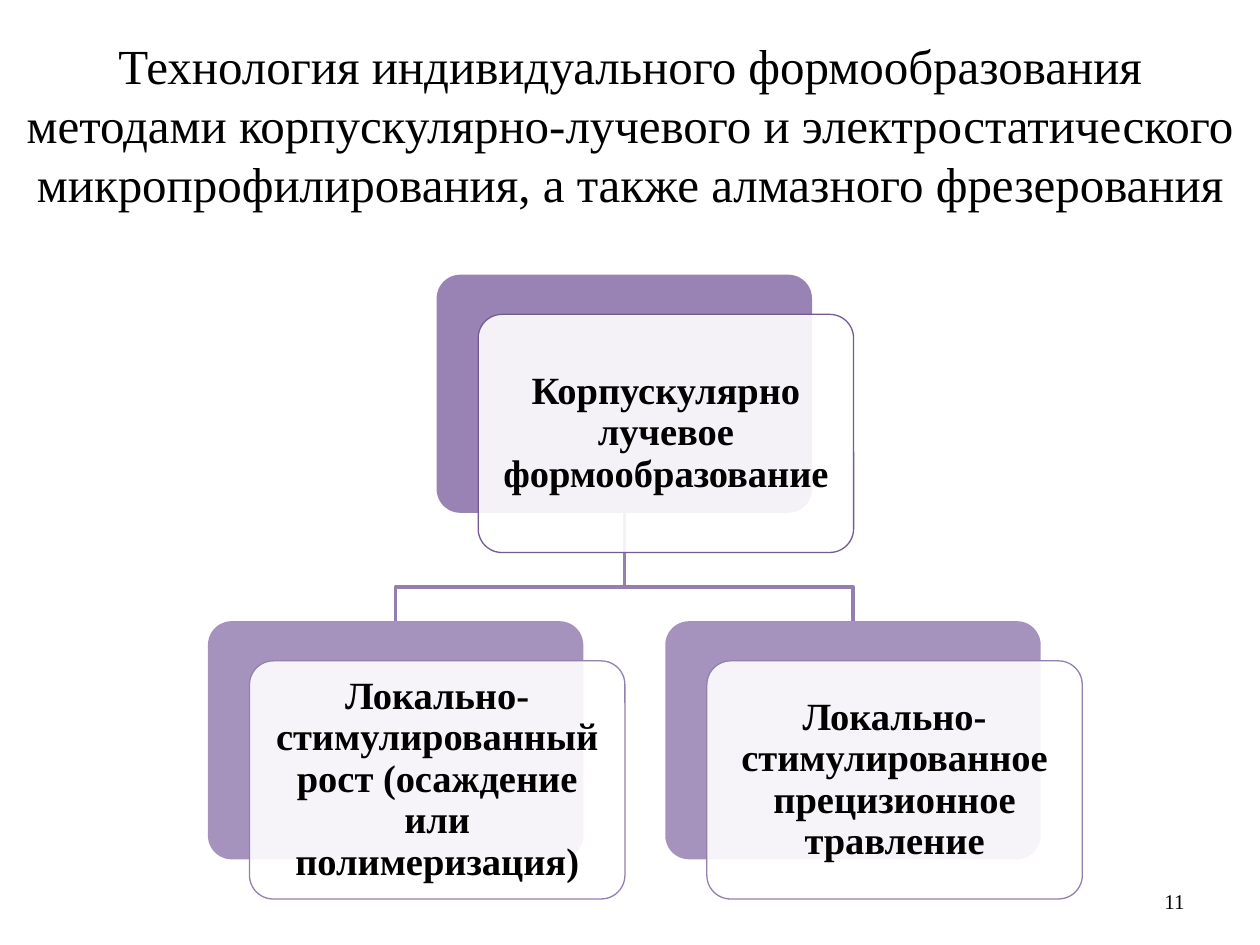
from dataclasses import dataclass

from lxml.etree import SubElement
from pptx import Presentation
from pptx.dml.color import RGBColor
from pptx.enum.shapes import MSO_SHAPE
from pptx.enum.text import MSO_ANCHOR, PP_ALIGN
from pptx.oxml.ns import qn
from pptx.util import Inches, Pt

COLORS = {
    "text": "000000",
    "purple": "8064A2",
    "white": "FFFFFF",
    "root_line": "745B93",
    "branch_line": "9480AE",
}
FONT = "Times New Roman"
CARD_WIDTH, CARD_HEIGHT = 2.98, 1.89
OFFSET_X, OFFSET_Y = 0.33, 0.315  # front card relative to back card
TEXT_INSET = 0.055


@dataclass
class Card:
    text: str
    left: float
    top: float
    opacity: int
    line: str

    @property
    def center(self) -> float:
        return self.left + CARD_WIDTH / 2


ROOT = Card("Корпускулярно лучевое формообразование", 3.465, 2.18, 80, "root_line")
BRANCHES = [
    Card("Локально-стимулированный рост (осаждение или полимеризация)",
         1.65, 4.93, 70, "branch_line"),
    Card("Локально-стимулированное прецизионное травление",
         5.28, 4.93, 70, "branch_line"),
]


def color(name: str) -> RGBColor:
    return RGBColor.from_string(COLORS[name])


def write_text(shape, text: str, size: int, align, bold: bool = False, **spacing) -> None:
    frame = shape.text_frame
    frame.word_wrap = True
    frame.vertical_anchor = MSO_ANCHOR.MIDDLE
    paragraph = frame.paragraphs[0]
    for name, value in {"alignment": align, **spacing}.items():
        setattr(paragraph, name, value)
    run = paragraph.add_run()
    run.text = text
    for name, value in {"name": FONT, "size": Pt(size), "bold": bold}.items():
        setattr(run.font, name, value)
    run.font.color.rgb = color("text")


def add_panel(slide, left: float, top: float, fill: str, opacity: int):
    shape = slide.shapes.add_shape(
        MSO_SHAPE.ROUNDED_RECTANGLE,
        Inches(left), Inches(top), Inches(CARD_WIDTH), Inches(CARD_HEIGHT))
    shape.adjustments[0] = 0.1
    shape.shadow.inherit = False
    shape.fill.solid()
    shape.fill.fore_color.rgb = color(fill)
    fill_color = shape.fill._xPr.find(qn("a:solidFill"))[0]
    SubElement(fill_color, qn("a:alpha"), val=str(opacity * 1000))
    shape.line.fill.background()
    return shape


def add_card(slide, card: Card) -> None:
    add_panel(slide, card.left, card.top, "purple", card.opacity)
    left, top = card.left + OFFSET_X, card.top + OFFSET_Y
    front = add_panel(slide, left, top, "white", 90)
    front.line.color.rgb = color(card.line)
    front.line.width = Pt(0.75)

    label = slide.shapes.add_textbox(
        Inches(left + TEXT_INSET), Inches(top + TEXT_INSET),
        Inches(CARD_WIDTH - 2 * TEXT_INSET), Inches(CARD_HEIGHT - 2 * TEXT_INSET))
    for side in ("left", "right", "top", "bottom"):
        setattr(label.text_frame, f"margin_{side}", Inches(0.09))
    write_text(label, card.text, 22, PP_ALIGN.CENTER, bold=True,
               line_spacing=0.9, space_after=Pt(7.7))


def add_branch_line(slide, parent: Card, child: Card) -> None:
    bend = child.top - 0.27
    points = [(parent.center, parent.top + CARD_HEIGHT), (parent.center, bend),
              (child.center, bend), (child.center, child.top)]
    start, *others = [(Inches(x), Inches(y)) for x, y in points]
    builder = slide.shapes.build_freeform(*start)
    builder.add_line_segments(others, close=False)
    shape = builder.convert_to_shape()
    shape.shadow.inherit = False
    shape.fill.background()
    shape.line.color.rgb = color("branch_line")
    shape.line.width = Pt(2)


def main() -> None:
    presentation = Presentation()
    presentation.slide_width, presentation.slide_height = Inches(10), Inches(7.5)
    slide = presentation.slides.add_slide(presentation.slide_layouts[5])

    # Title
    title = slide.shapes.title
    box = {"left": 0, "top": 0.21, "width": 10, "height": 1.55}
    for name, value in box.items():
        setattr(title, name, Inches(value))
    write_text(title, "Технология индивидуального формообразования методами "
               "корпускулярно-лучевого и электростатического микропрофилирования, "
               "а также алмазного фрезерования", 28, PP_ALIGN.CENTER)

    # Hierarchy: lines lie behind the cards
    for branch in reversed(BRANCHES):
        add_branch_line(slide, ROOT, branch)
    for card in [ROOT, *BRANCHES]:
        add_card(slide, card)

    # Slide number
    number = slide.shapes.add_textbox(Inches(7.17), Inches(6.95), Inches(2.33), Inches(0.4))
    write_text(number, "11", 12, PP_ALIGN.RIGHT)

    presentation.save("out.pptx")


if __name__ == "__main__":
    main()
